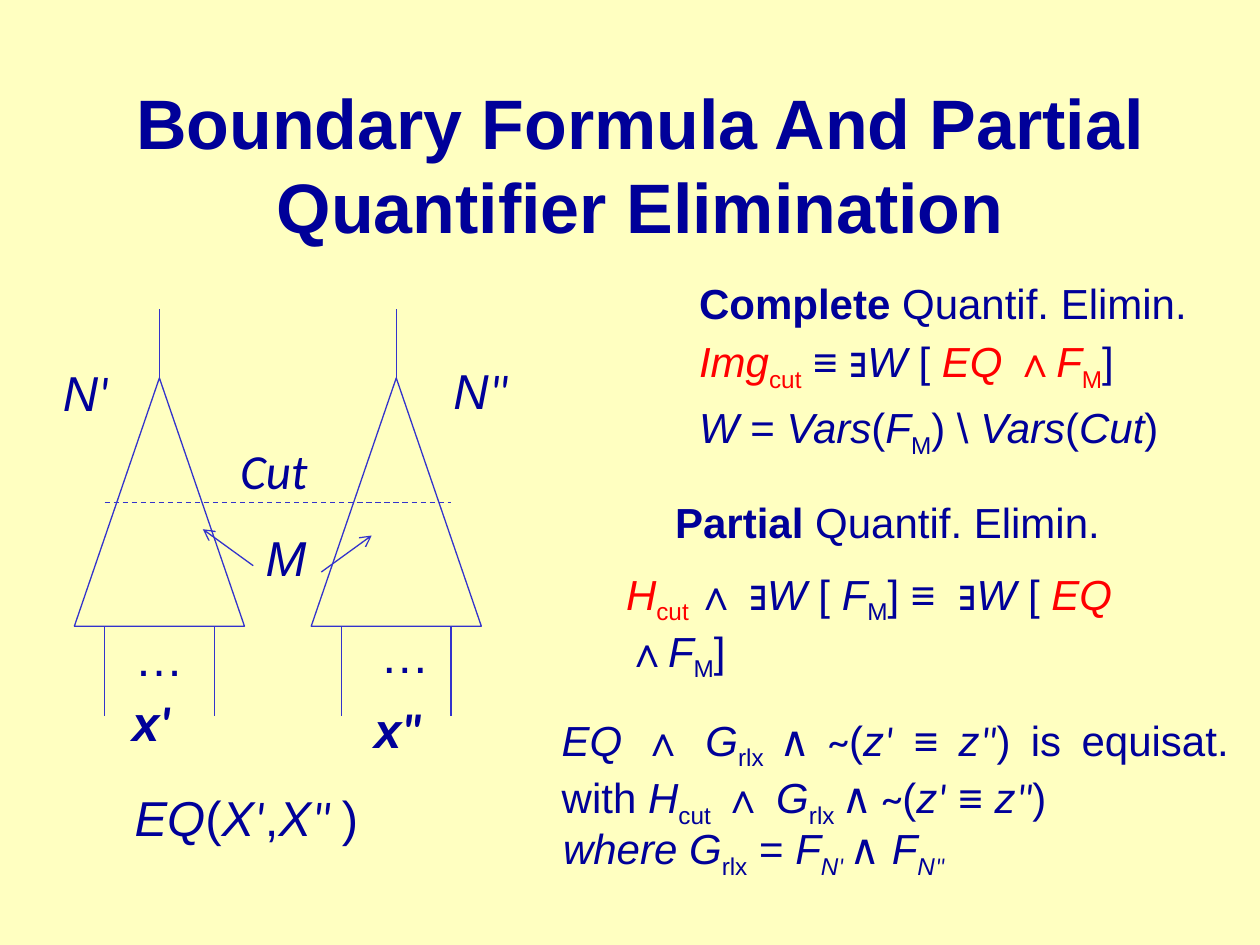
from lxml.etree import SubElement
from pptx import Presentation
from pptx.dml.color import RGBColor
from pptx.enum.dml import MSO_LINE
from pptx.enum.shapes import MSO_CONNECTOR, MSO_SHAPE
from pptx.enum.text import MSO_ANCHOR, MSO_AUTO_SIZE, PP_ALIGN
from pptx.oxml.ns import qn
from pptx.util import Inches, Pt

THEME = {
    "bg": RGBColor.from_string("FFFFC1"), "text": RGBColor.from_string("000099"),
    "accent": RGBColor.from_string("FF0000"), "line": RGBColor.from_string("3333CC"),
    "font": "Arial", "alt_font": "Calibri",
    "title": 40, "label": 28, "formula": 24, "line_width": 0.75,
}

# Runs are (text, flags): b bold, i italic, s subscript, r red, c alternate font
TITLE = "Boundary Formula And Partial Quantifier Elimination"

# Diagram labels: (left, top, width, height), runs
LABELS = [
    ((0.95, 5.45, 0.51, 0.57), [("x", "bi"), ("'", "bic")]),
    ((2.87, 5.5, 0.59, 0.57), [("x", "bi"), ('"', "bic")]),
    ((0.97, 4.93, 0.59, 0.57), [("…", "")]),
    ((2.92, 4.91, 0.59, 0.57), [("…", "")]),
    ((0.4, 2.83, 0.57, 0.57), [("N", "i"), ("'", "ic")]),
    ((3.5, 2.81, 0.64, 0.57), [("N", "i"), ('"', "ic")]),
    ((0.97, 6.2, 2, 0.57), [("EQ", "i"), ("(", ""), ("X", "i"), ("'", "ic"), (",", ""),
                            ("X", "i"), ('" ', "ic"), (")", "")]),
    ((1.81, 3.45, 0.74, 0.57), [("Cut", "ic")]),
    ((2.01, 4.14, 0.53, 0.57), [("M", "i")]),
]

# Parts shared by the formulas
Z_DIFFER = [("∧ ~", "c"), ("(", ""), ("z", "i"), ("'", "ic"), (" ≡ ", ""),
            ("z", "i"), ('"', "ic")]
F_M = [("F", "i"), ("M", "s")]

COMPLETE = [
    [("Complete", "b"), (" Quantif. Elimin.", "")],
    [("Img", "ir"), ("cut", "sr"), (" ≡ ∃", ""), ("W ", "i"), ("[ ", ""), ("EQ ", "ir"),
     ("∧", "br"), ("F", "ir"), ("M", "sr"), ("] ", "")],
    [("W ", "i"), ("= ", ""), ("Vars", "i"), ("(", ""), *F_M, (") \\ ", ""),
     ("Vars", "i"), ("(", ""), ("Cut", "i"), (")", "")],
]
PARTIAL = [("Partial ", "b"), ("Quantif. Elimin. ", "")]
PARTIAL_FORMULA = [
    ("H", "ir"), ("cut ", "sr"), ("∧", "b"), (" ∃", ""), ("W ", "i"), ("[ ", ""), *F_M,
    ("] ≡  ∃", ""), ("W ", "i"), ("[ ", ""), ("EQ ", "ir"), ("\v", ""), ("∧", "b"),
    *F_M, ("]", ""),
]
EQUISAT = [
    ("EQ ", "i"), ("∧", ""), (" G", "i"), ("rlx ", "s"), *Z_DIFFER,
    (") is equisat. with ", ""), ("H", "i"), ("cut", "s"), (" ∧ ", ""), ("G", "i"),
    ("rlx ", "s"), *Z_DIFFER, (") ", ""),
]
WHERE = [("where G", "i"), ("rlx", "s"), (" = ", ""), ("F", "i"), ("N", "is"),
         ("' ", "isc"), ("∧", "c"), (" F", "i"), ("N", "is"), ('"', "isc")]

# Formula blocks: box, paragraphs, alignment, wrap
FORMULAS = [
    ((5.45, 2.15, 4.11, 1.47), COMPLETE, PP_ALIGN.LEFT, False),
    ((5.26, 3.89, 3.7, 0.5), [PARTIAL], PP_ALIGN.LEFT, False),
    ((4.87, 4.46, 4.91, 0.5), [PARTIAL_FORMULA], PP_ALIGN.LEFT, True),
    ((4.36, 5.62, 5.49, 0.91), [EQUISAT], PP_ALIGN.JUSTIFY, True),
    ((4.37, 6.48, 3.31, 0.5), [WHERE], PP_ALIGN.LEFT, False),
]

# Circuit geometry
CIRCUIT_LEFTS = (0.59, 2.47)
APEX_Y, BASE_Y, CIRCUIT_W = 3, 4.97, 1.35
OUTPUT_TOP, INPUT_BOTTOM = 2.45, 5.68
INPUT_OFFSETS = (0.24, 1.11)
CUT = (0.83, 3.99, 3.58, 3.99)
ARROWS = [(2.01, 4.49, 1.61, 4.2), (2.55, 4.54, 2.95, 4.25)]


def add_run(p, text, flags, size):
    r = p.add_run()
    r.text = text
    f = r.font
    f.size = Pt(size)
    f.name = THEME["alt_font" if "c" in flags else "font"]
    f.bold, f.italic = "b" in flags, "i" in flags
    f.color.rgb = THEME["accent" if "r" in flags else "text"]
    if "s" in flags:
        r._r.get_or_add_rPr().set("baseline", "-25000")


def add_text(s, box, paragraphs, size, align=PP_ALIGN.LEFT, wrap=False):
    tf = s.shapes.add_textbox(*map(Inches, box)).text_frame
    tf.word_wrap = wrap
    tf.auto_size = MSO_AUTO_SIZE.SHAPE_TO_FIT_TEXT
    for n, runs in enumerate(paragraphs):
        p = tf.add_paragraph() if n else tf.paragraphs[0]
        p.alignment = align
        p.space_before = Pt(size * 0.2)
        for text, flags in runs:
            if text == "\v":
                p.add_line_break()
            else:
                add_run(p, text, flags, size)


def style_line(line):
    line.color.rgb = THEME["line"]
    line.width = Pt(THEME["line_width"])


def add_line(s, ends, dashed=False, arrow=False):
    c = s.shapes.add_connector(MSO_CONNECTOR.STRAIGHT, *map(Inches, ends))
    style_line(c.line)
    if dashed:
        c.line.dash_style = MSO_LINE.DASH
    if arrow:
        SubElement(c.line._get_or_add_ln(), qn("a:tailEnd"), type="arrow")
    SubElement(c._element.spPr, qn("a:effectLst"))


def add_circuit(s, left):
    sp = s.shapes.add_shape(MSO_SHAPE.ISOSCELES_TRIANGLE, Inches(left), Inches(APEX_Y),
                            Inches(CIRCUIT_W), Inches(BASE_Y - APEX_Y))
    sp.shadow.inherit = False
    sp.fill.background()
    style_line(sp.line)
    apex_x = left + CIRCUIT_W / 2
    add_line(s, (apex_x, APEX_Y, apex_x, OUTPUT_TOP))
    for offset in INPUT_OFFSETS:
        add_line(s, (left + offset, BASE_Y, left + offset, INPUT_BOTTOM))


def main():
    prs = Presentation()
    prs.slide_width, prs.slide_height = Inches(10), Inches(7.5)
    s = prs.slides.add_slide(prs.slide_layouts[5])
    s.background.fill.solid()
    s.background.fill.fore_color.rgb = THEME["bg"]

    # Title
    title = s.shapes.title
    title.left, title.top, title.width, title.height = map(Inches, (0.75, 0.67, 8.66, 1.25))
    tf = title.text_frame
    tf.vertical_anchor = MSO_ANCHOR.MIDDLE
    tf.auto_size = MSO_AUTO_SIZE.NONE
    tf.paragraphs[0].alignment = PP_ALIGN.CENTER
    add_run(tf.paragraphs[0], TITLE, "b", THEME["title"])

    # Two circuits joined by the cut
    for left in CIRCUIT_LEFTS:
        add_circuit(s, left)
    add_line(s, CUT, dashed=True)
    for ends in ARROWS:
        add_line(s, ends, arrow=True)
    for box, runs in LABELS:
        add_text(s, box, [runs], THEME["label"])

    # Formulas
    for box, paragraphs, align, wrap in FORMULAS:
        add_text(s, box, paragraphs, THEME["formula"], align, wrap)

    prs.save("out.pptx")


if __name__ == "__main__":
    main()
